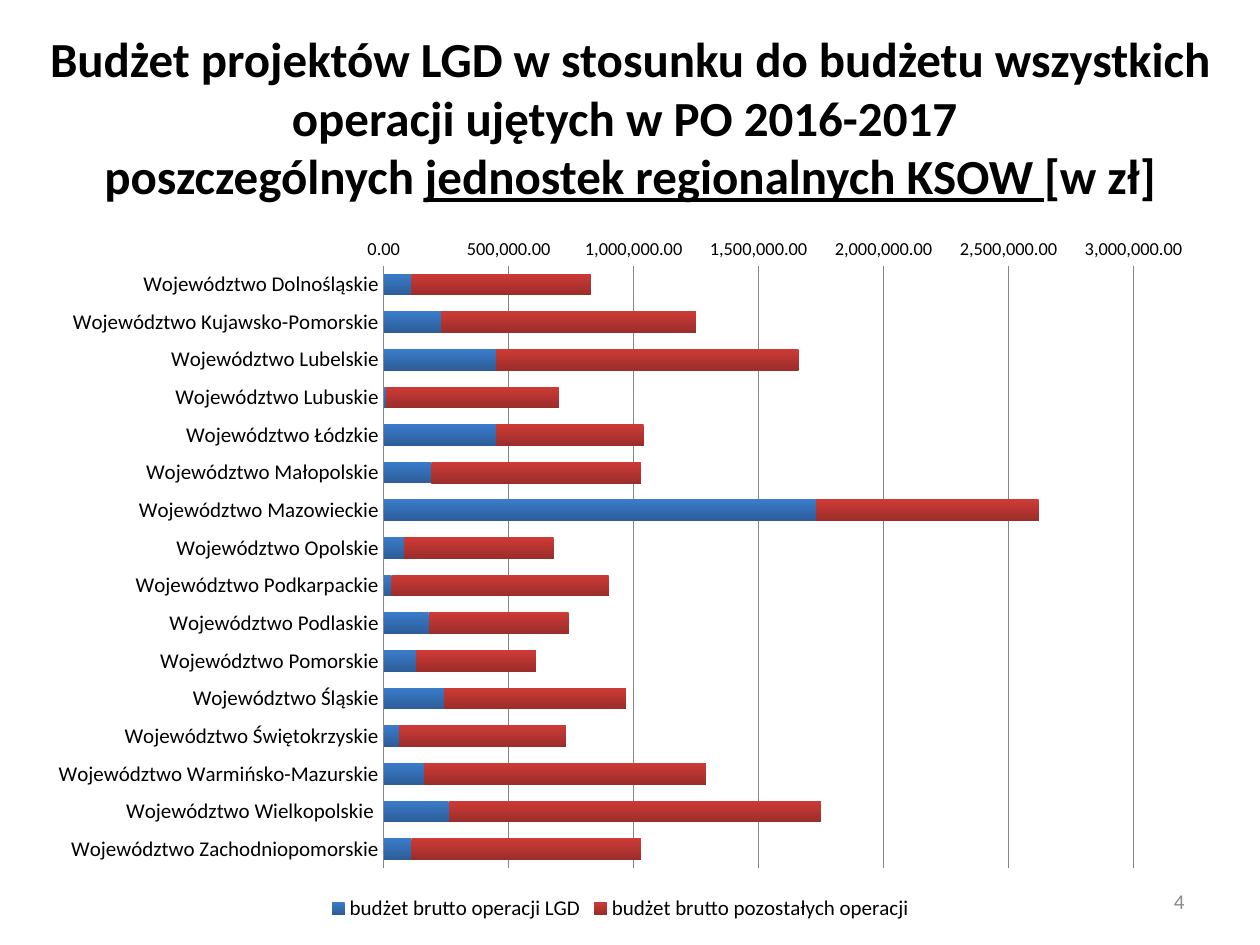
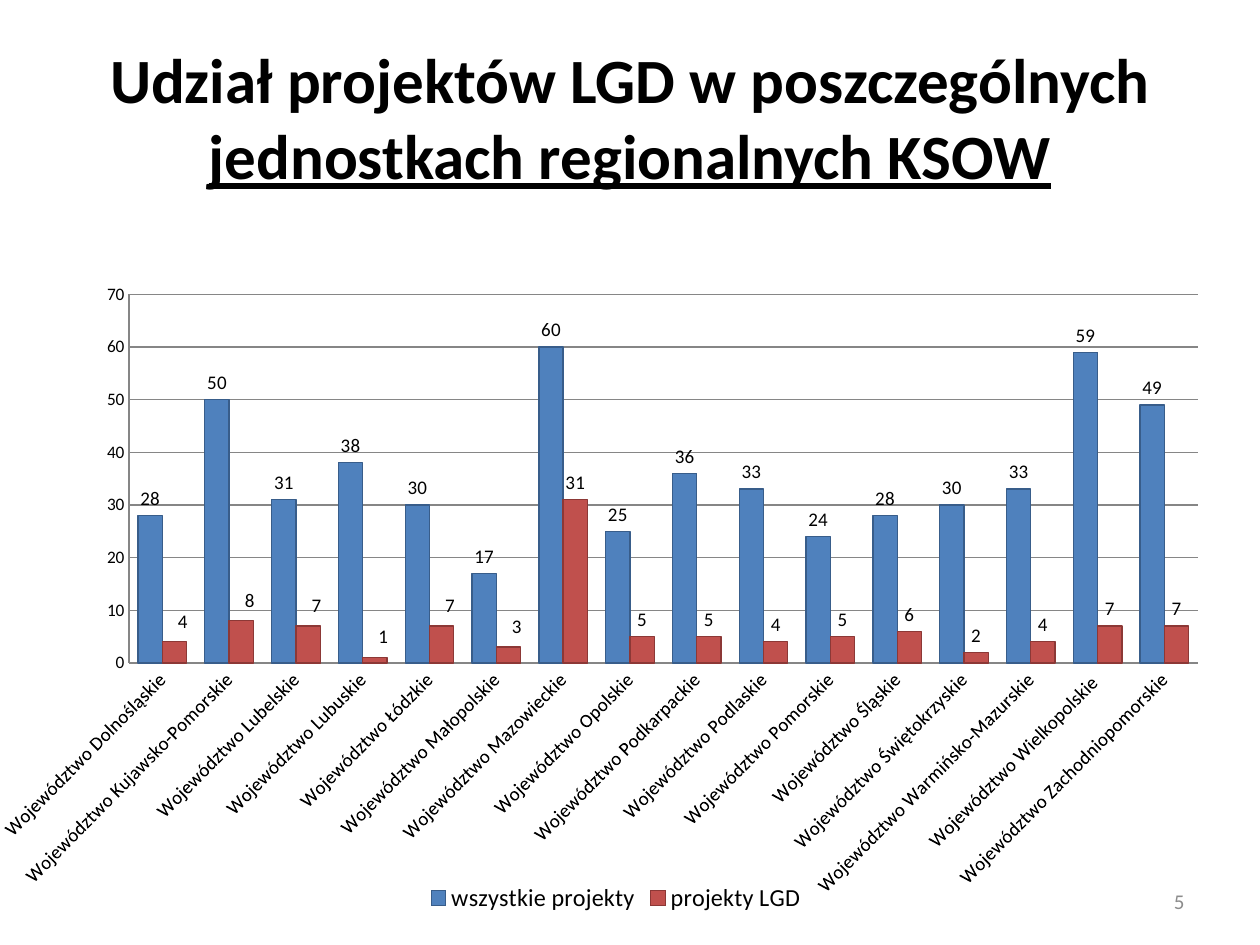
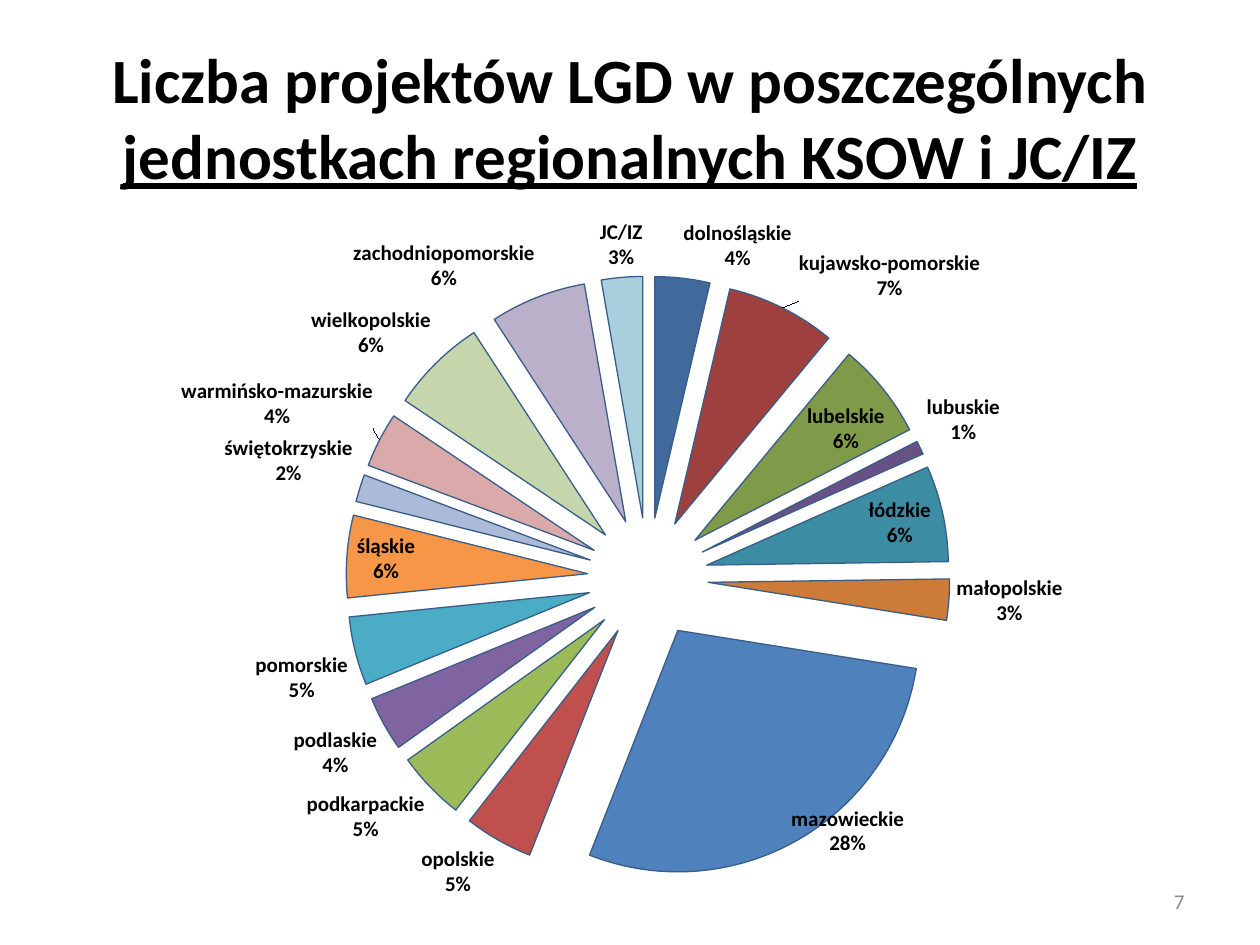
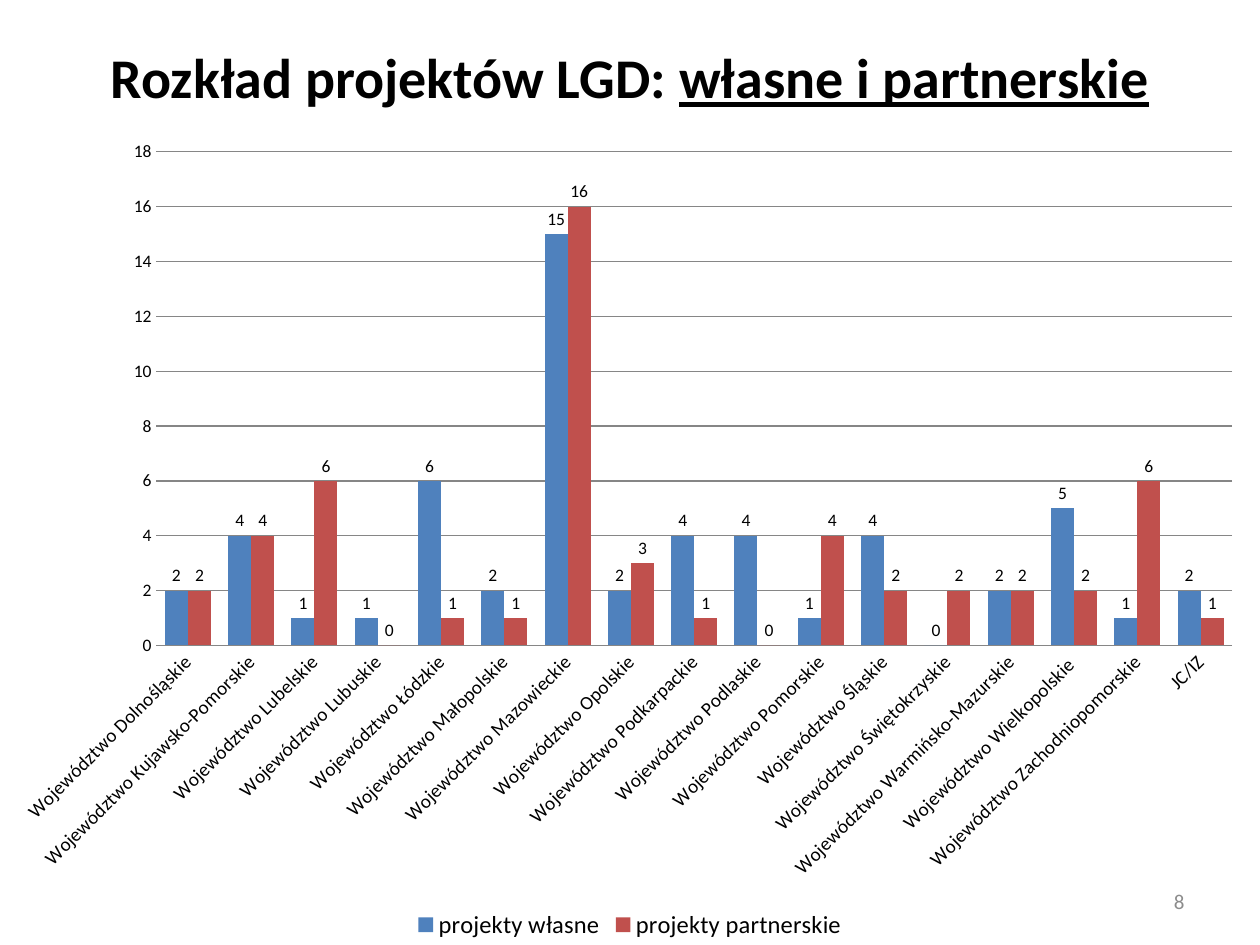
"""Build four slides of charts on LGD projects in the KSOW regional units."""
from copy import deepcopy
from dataclasses import dataclass

from pptx import Presentation
from pptx import util as u
from pptx.chart import data
from pptx.dml.color import RGBColor
from pptx.enum import chart as ch
from pptx.enum import text
from pptx.oxml import ns, parse_xml


@dataclass(frozen=True)
class Theme:
    font: str = "Calibri"
    ink: str = "000000"
    gray: str = "8C8C8C"
    grid: str = "868686"
    bars: tuple = ("4F81BD", "C0504D")
    edges: tuple = ("385D8A", "8C3836")
    fades: tuple = (("3A7CCB", "2C5D98"), ("CE3B37", "9B2D2A"))
    slices: tuple = ("406A9B", "9E413E", "7F9A48", "695185", "3C8DA3", "CC7B38",
                     "4F81BD", "C0504D", "9BBB59", "8064A2", "4BACC6", "F79646",
                     "AABAD7", "D9AAA9", "C6D6AC", "BAB0C9", "A9CEDC")
    base: float = 10
    scale: float = 10.5
    tick: float = 11
    note: float = 12
    legend: float = 14
    small: float = 28
    mid: float = 32
    large: float = 36
    rule: float = 0.75


NAMES = ["Dolnośląskie", "Kujawsko-Pomorskie", "Lubelskie", "Lubuskie", "Łódzkie",
         "Małopolskie", "Mazowieckie", "Opolskie", "Podkarpackie", "Podlaskie",
         "Pomorskie", "Śląskie", "Świętokrzyskie", "Warmińsko-Mazurskie",
         "Wielkopolskie ", "Zachodniopomorskie"]
UNITS = ["Województwo " + name for name in NAMES]
CENTRE = "JC/IZ"
COUNTS = [4, 8, 7, 1, 7, 3, 31, 5, 5, 4, 5, 6, 2, 4, 7, 7]


def node(body):
    tag, rest = body.split(" ", 1)
    return parse_xml(f"<c:{tag} {ns.nsdecls('c')} {rest}")


def layout(*shares, inner=False):
    modes = ""
    if inner:
        modes = ('<c:layoutTarget val="inner"/><c:xMode val="edge"/>'
                 '<c:yMode val="edge"/>')
    spots = "".join(f'<c:{key} val="{share / 100:.3f}"/>'
                    for key, share in zip("xywh", shares))
    return node(f"layout ><c:manualLayout>{modes}{spots}</c:manualLayout></c:layout>")


class Deck:
    def __init__(self, theme):
        self.theme = theme
        self.file = Presentation()
        self.file.slide_width = u.Inches(10)
        self.file.slide_height = u.Inches(7.5)
        self.slide = None

    def style(self, font, size, color=None, bold=None):
        font.name = self.theme.font
        font.size = u.Pt(size)
        font.bold = bold
        font.color.rgb = RGBColor.from_string(color or self.theme.ink)

    def place(self, shape, box):
        shape.left, shape.top, shape.width, shape.height = map(u.Inches, box)

    def line(self, line, color):
        line.color.rgb = RGBColor.from_string(color)
        line.width = u.Pt(self.theme.rule)

    def page(self, number, parts, size, box=(0.5, 0.3, 9, 1.25)):
        self.slide = self.file.slides.add_slide(self.file.slide_layouts[5])
        self.title(parts, size, box)
        self.number(number)

    def title(self, parts, size, box):
        head = self.slide.shapes.title
        self.place(head, box)
        frame = head.text_frame
        frame.auto_size = text.MSO_AUTO_SIZE.NONE
        frame.vertical_anchor = text.MSO_ANCHOR.MIDDLE
        para = frame.paragraphs[0]
        para.alignment = text.PP_ALIGN.CENTER
        for i, part in enumerate(parts):
            for j, piece in enumerate(part.split("\n")):
                if j:
                    para.add_line_break()
                run = para.add_run()
                run.text = piece
                self.style(run.font, size, bold=True)
                run.font.underline = i % 2 == 1

    def number(self, value):
        box = map(u.Inches, (7.17, 6.95, 2.33, 0.4))
        frame = self.slide.shapes.add_textbox(*box).text_frame
        frame.word_wrap = True
        frame.vertical_anchor = text.MSO_ANCHOR.MIDDLE
        para = frame.paragraphs[0]
        para.text = str(value)
        para.alignment = text.PP_ALIGN.RIGHT
        self.style(para.runs[0].font, self.theme.note, self.theme.gray)

    def chart(self, kind, box, cats, rows):
        feed = data.CategoryChartData()
        feed.categories = cats
        for name, vals in rows:
            feed.add_series(name, vals)
        frame = self.slide.shapes.add_chart(kind, *map(u.Inches, box), feed)
        chart = frame.chart
        self.style(chart.font, self.theme.base)
        chart.has_title = False
        chart.has_legend = False
        return chart

    def frame(self, chart, *shares):
        area = chart._chartSpace.chart.plotArea
        for old in area.findall(ns.qn("c:layout")):
            area.remove(old)
        area.insert(0, layout(*shares, inner=True))

    def legend(self, chart, size):
        chart.has_legend = True
        chart.legend.position = ch.XL_LEGEND_POSITION.BOTTOM
        chart.legend.include_in_layout = False
        self.style(chart.legend.font, size)

    def axes(self, chart, size, scale, ruled=False):
        for axis, points in ((chart.category_axis, size), (chart.value_axis, scale)):
            axis.major_tick_mark = axis.minor_tick_mark = ch.XL_TICK_MARK.NONE
            self.style(axis.tick_labels.font, points)
            self.line(axis.format.line, self.theme.grid)
        value = chart.value_axis
        value.has_major_gridlines = True
        self.line(value.major_gridlines.format.line, self.theme.grid)
        if not ruled:
            value.format.line.fill.background()

    def bars(self, box, rows):
        chart = self.chart(ch.XL_CHART_TYPE.BAR_STACKED, box, UNITS, rows)
        self.axes(chart, self.theme.note, self.theme.scale)
        self.legend(chart, self.theme.note)
        chart.category_axis.reverse_order = True
        chart.value_axis.major_unit = 500000
        ticks = chart.value_axis.tick_labels
        ticks.number_format = "#,##0.00"
        ticks.number_format_is_linked = False
        plot = chart.plots[0]
        plot.gap_width, plot.overlap = 75, 100
        plot.vary_by_categories = False
        for row, fade in zip(plot.series, self.theme.fades):
            fill = row.format.fill
            fill.gradient()
            fill.gradient_angle = 270
            for stop, color in zip(fill.gradient_stops, fade):
                stop.color.rgb = RGBColor.from_string(color)

    def columns(self, box, cats, rows, size, edged=False):
        chart = self.chart(ch.XL_CHART_TYPE.COLUMN_CLUSTERED, box, cats, rows)
        self.axes(chart, self.theme.tick, self.theme.base, edged)
        self.legend(chart, self.theme.legend)
        chart.category_axis._element.txPr.bodyPr.set("rot", "-2700000")
        plot = chart.plots[0]
        plot.gap_width = 75
        plot.vary_by_categories = False
        for row, color, edge in zip(plot.series, self.theme.bars, self.theme.edges):
            row.format.fill.solid()
            row.format.fill.fore_color.rgb = RGBColor.from_string(color)
            if edged:
                self.line(row.format.line, edge)
            tags = row.data_labels
            tags.show_value = True
            tags.position = ch.XL_LABEL_POSITION.OUTSIDE_END
            self.style(tags.font, size)
        return chart

    def nudge(self, row, spots, x, y):
        tags = row.data_labels._element
        parts = [part for part in tags if part.tag != ns.qn("c:showLeaderLines")]
        for at, i in enumerate(spots):
            tag = node(f'dLbl ><c:idx val="{i}"/></c:dLbl>')
            tag.append(layout(x, y))
            tag.extend(deepcopy(parts))
            tags.insert(at, tag)

    def pie(self, box, cats, rows):
        chart = self.chart(ch.XL_CHART_TYPE.PIE, box, cats, rows)
        plot = chart.plots[0]
        plot.vary_by_categories = True
        row = plot.series[0]
        row._element.find(ns.qn("c:tx")).addnext(node('explosion val="25"/>'))
        for i, color in enumerate(self.theme.slices):
            form = row.points[i].format
            form.fill.solid()
            form.fill.fore_color.rgb = RGBColor.from_string(color)
            self.line(form.line, self.theme.edges[0])
        tags = row.data_labels
        tags.show_value = False
        tags.show_percentage = tags.show_category_name = True
        tags.number_format = "0%"
        tags.number_format_is_linked = False
        tags.position = ch.XL_LABEL_POSITION.BEST_FIT
        self.style(tags.font, self.theme.note, bold=True)
        last = tags._element.find(ns.qn("c:showBubbleSize"))
        last.addnext(node("separator >\n</c:separator>"))
        return chart


def main():
    theme = Theme()
    deck = Deck(theme)

    deck.page(4, ["Budżet projektów LGD w stosunku do budżetu wszystkich operacji "
                  "ujętych w PO 2016-2017 \nposzczególnych ",
                  "jednostek regionalnych KSOW ", "[w zł]"],
              theme.small, (0, 0.3, 10, 1.25))
    deck.bars((0.28, 1.78, 9.29, 5.57), [
        ("budżet brutto operacji LGD",
         [110000, 230000, 450000, 10000, 450000, 190000, 1730000, 80000,
          30000, 180000, 130000, 240000, 60000, 160000, 260000, 110000]),
        ("budżet brutto pozostałych operacji",
         [720000, 1020000, 1210000, 690000, 590000, 840000, 890000, 600000,
          870000, 560000, 480000, 730000, 670000, 1130000, 1490000, 920000])])

    deck.page(5, ["Udział projektów LGD w poszczególnych ",
                  "jednostkach regionalnych KSOW"], theme.large)
    chart = deck.columns((0, 1.78, 9.65, 5.51), UNITS, [
        ("wszystkie projekty",
         [28, 50, 31, 38, 30, 17, 60, 25, 36, 33, 24, 28, 30, 33, 59, 49]),
        ("projekty LGD", COUNTS)], theme.tick, True)
    deck.frame(chart, 9.4, 10.1, 89.1, 53.1)
    deck.nudge(chart.plots[0].series[1], range(6), 0.7, -0.5)

    deck.page(7, ["Liczba projektów LGD w poszczególnych ",
                  "jednostkach regionalnych KSOW i JC/IZ"], theme.large)
    cats = [name.strip().lower() for name in NAMES] + [CENTRE]
    chart = deck.pie((1.06, 1.7, 8.03, 5.8), cats, [("Series 1", COUNTS + [3])])
    deck.frame(chart, 8.6, 8.5, 84.5, 82.6)
    deck.nudge(chart.plots[0].series[0], [6], -1, -5.5)

    deck.page(8, ["Rozkład projektów LGD: ", "własne i partnerskie"],
              theme.mid, (0.5, 0.3, 9, 0.61))
    chart = deck.columns((0, 0.99, 10, 6.51), UNITS + [CENTRE], [
        ("projekty własne", [2, 4, 1, 1, 6, 2, 15, 2, 4, 4, 1, 4, 0, 2, 5, 1, 2]),
        ("projekty partnerskie",
         [2, 4, 6, 0, 1, 1, 16, 3, 1, 0, 4, 2, 2, 2, 2, 6, 1])], theme.base)
    deck.frame(chart, 12.4, 3.3, 85.4, 60.2)

    deck.file.save("out.pptx")


if __name__ == "__main__":
    main()
